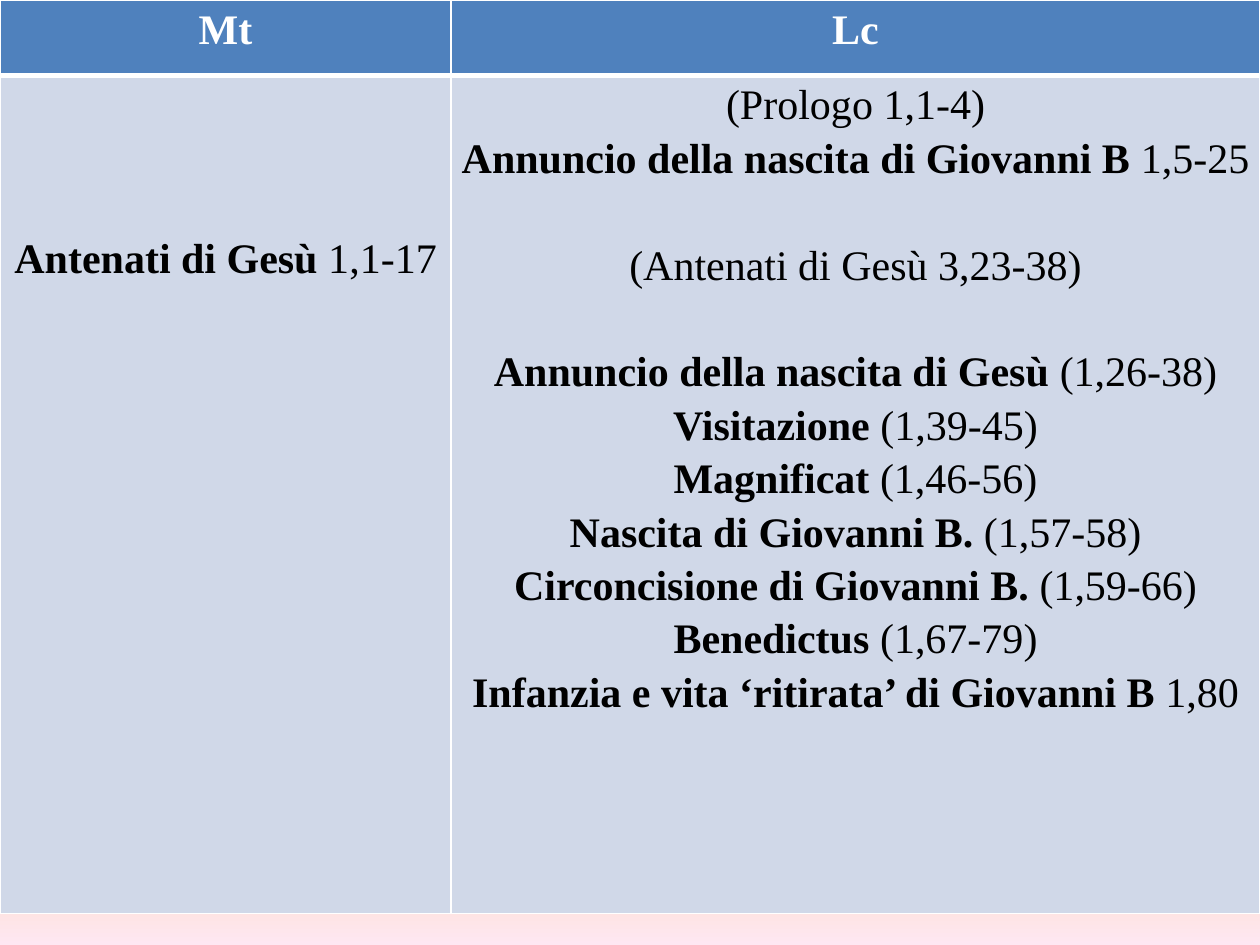
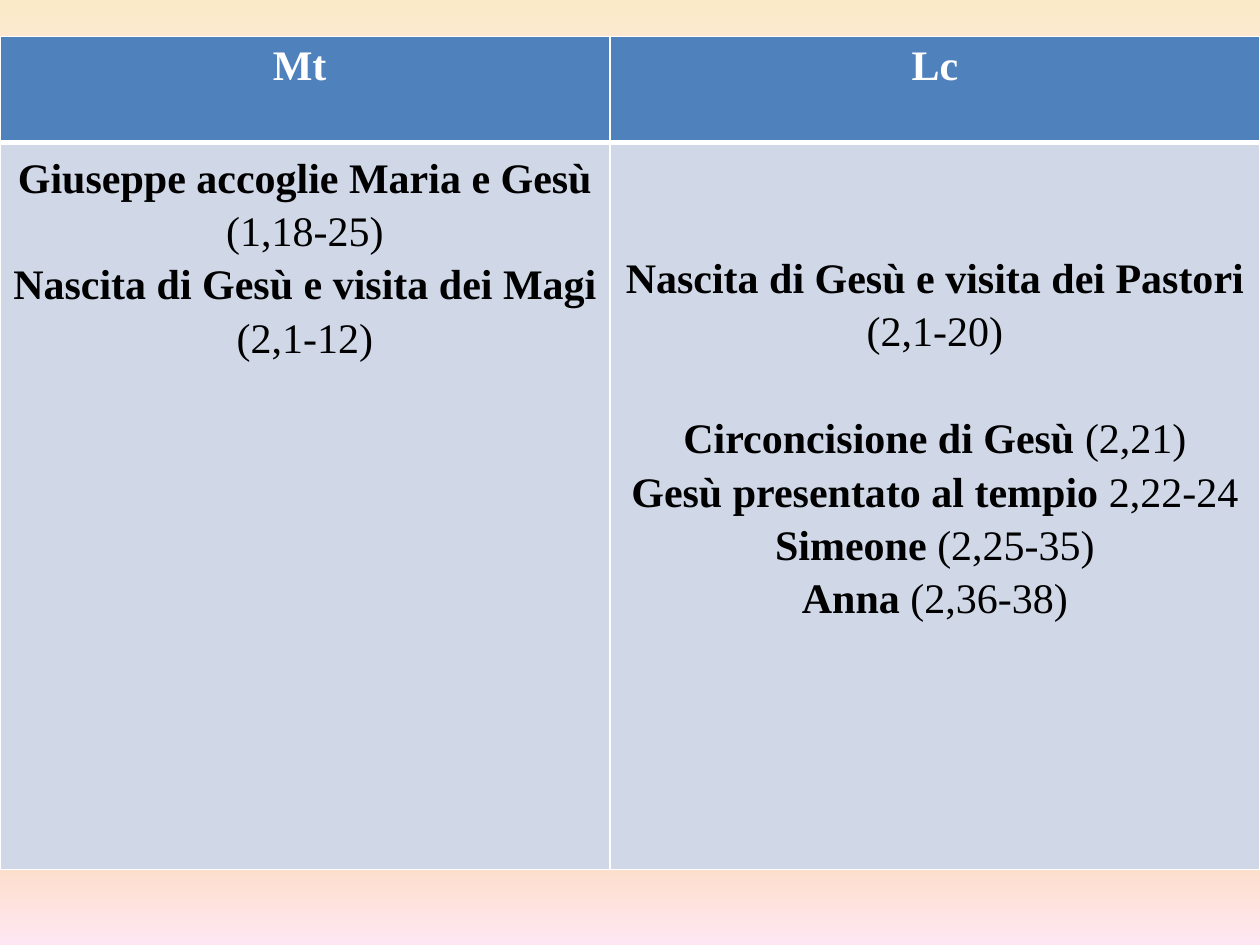
from dataclasses import dataclass

from pptx import Presentation
from pptx.dml.color import RGBColor as Rgb
from pptx.enum.text import PP_ALIGN as Align
from pptx.oxml.ns import qn
from pptx.oxml.xmlchemy import OxmlElement as Node
from pptx.util import Inches, Pt


@dataclass(frozen=True)
class Theme:
    """Colours, type and spacing shared by the slides."""
    font: str = "Times New Roman"
    size: int = 24
    head: str = "4F81BD"
    body: str = "D0D8E8"
    light: str = "FFFFFF"
    dark: str = "000000"
    lead: float = 1.15
    line: float = 0.424
    thin: int = 1
    thick: int = 3
    stops: tuple = ((0, "FBEAC7"), (18, "FEE7F2"), (36, "FAC77D"),
                    (61, "FBA97D"), (82, "FBD49C"), (100, "FEE7F2"))


@dataclass(frozen=True)
class Grid:
    """Place and spacing of one table."""
    top: float
    cols: tuple
    rows: tuple
    side: float
    inset: float
    lead: float


@dataclass(frozen=True)
class Event:
    """One entry: bold name, plain verses, blank lines above."""
    name: str
    verse: str = ""
    gap: int = 0


THEME = Theme()

FIRST = Grid(0, (3.58, 6.42), (0.6, 6.65), 0.07, 0, THEME.lead)
NEXT = Grid(0.29, (4.84, 5.16), (0.84, 5.77), 0.1, 0.05, 1)

ROOTS = [
    [Event("Antenati di Gesù ", "1,1-17", 3)],
    [Event("", "(Prologo 1,1-4)"),
     Event("Annuncio della nascita di Giovanni B ", "1,5-25"),
     Event("", "(Antenati di Gesù 3,23-38)", 1),
     Event("Annuncio della nascita di Gesù ", "(1,26-38)", 1),
     Event("Visitazione ", "(1,39-45)"),
     Event("Magnificat ", "(1,46-56)"),
     Event("Nascita di Giovanni B. ", "(1,57-58)"),
     Event("Circoncisione di Giovanni B. ", "(1,59-66)"),
     Event("Benedictus ", "(1,67-79)"),
     Event("Infanzia e vita ‘ritirata’ di Giovanni B ", "1,80")],
]

BIRTH = [
    [Event("Giuseppe accoglie Maria e Gesù ", "(1,18-25)"),
     Event("Nascita di Gesù e visita dei Magi ", "(2,1-12)")],
    [Event("Nascita di Gesù e visita dei Pastori ", "(2,1-20)", 2),
     Event("Circoncisione di Gesù ", "(2,21)", 1),
     Event("Gesù presentato al tempio ", "2,22-24"),
     Event("Simeone ", "(2,25-35)"),
     Event("Anna ", "(2,36-38)")],
]


def add_solid(parent, hue):
    """Append a plain colour to an XML node."""
    color = Node("a:srgbClr")
    color.set("val", hue)
    parent.append(color)


def paint_back(master):
    """Give the master its vertical gradient."""
    fill = master.background.fill
    fill.gradient()
    fill.gradient_angle = 270
    ramp = next(master.element.iter(qn("a:gsLst")))
    for stop in list(ramp):
        ramp.remove(stop)
    for spot, hue in THEME.stops:
        stop = Node("a:gs")
        stop.set("pos", str(spot * 1000))
        add_solid(stop, hue)
        ramp.append(stop)


def add_edges(cell, top, foot):
    """Draw the four cell borders."""
    props = cell._tc.get_or_add_tcPr()
    widths = {"L": THEME.thin, "R": THEME.thin, "T": top, "B": foot}
    for side, width in widths.items():
        edge = Node(f"a:ln{side}")
        edge.set("w", str(Pt(width)))
        solid = Node("a:solidFill")
        add_solid(solid, THEME.light)
        edge.append(solid)
        props.append(edge)


def style_cell(cell, grid, hue, top, foot):
    """Set the margins, borders and fill of a cell."""
    cell.margin_left = cell.margin_right = Inches(grid.side)
    cell.margin_top = cell.margin_bottom = Inches(grid.inset)
    add_edges(cell, top, foot)
    cell.fill.solid()
    cell.fill.fore_color.rgb = Rgb.from_string(hue)


def style_para(para, hue, lead):
    """Set the font and spacing of a paragraph."""
    para.alignment = Align.CENTER
    para.line_spacing = lead
    para.font.name = THEME.font
    para.font.size = Pt(THEME.size)
    para.font.color.rgb = Rgb.from_string(hue)


def add_head(cell, text, grid):
    """Fill a header cell."""
    style_cell(cell, grid, THEME.head, THEME.thin, THEME.thick)
    para = cell.text_frame.paragraphs[0]
    para.text = text
    style_para(para, THEME.light, grid.lead)
    para.font.bold = True


def add_events(cell, events, grid):
    """Fill a body cell with its entries."""
    style_cell(cell, grid, THEME.body, THEME.thick, THEME.thin)
    frame = cell.text_frame
    for rank, event in enumerate(events):
        para = frame.add_paragraph() if rank else frame.paragraphs[0]
        style_para(para, THEME.dark, THEME.lead)
        space = event.gap * THEME.line
        if event.gap and rank:
            para.space_before = Inches(space)
        elif event.gap:
            cell.margin_top = Inches(grid.inset + space - 0.05)
        for text, bold in ((event.name, True), (event.verse, False)):
            if text:
                run = para.add_run()
                run.text = text
                run.font.bold = bold


def add_slide(deck, grid, heads, lists):
    """Add a slide that compares two gospels."""
    slide = deck.slides.add_slide(deck.slide_layouts[6])
    frame = slide.shapes.add_table(
        2, len(heads), 0, Inches(grid.top),
        Inches(sum(grid.cols)), Inches(sum(grid.rows)))
    table = frame.table
    for row, high in zip(table.rows, grid.rows):
        row.height = Inches(high)
    for col, wide in enumerate(grid.cols):
        table.columns[col].width = Inches(wide)
        add_head(table.cell(0, col), heads[col], grid)
        add_events(table.cell(1, col), lists[col], grid)


def main():
    """Build and save the deck."""
    deck = Presentation()
    deck.slide_width, deck.slide_height = Inches(10), Inches(7.5)
    paint_back(deck.slide_master)
    add_slide(deck, FIRST, ("Mt", "Lc"), ROOTS)
    add_slide(deck, NEXT, ("Mt ", "Lc"), BIRTH)
    deck.save("out.pptx")


if __name__ == "__main__":
    main()
